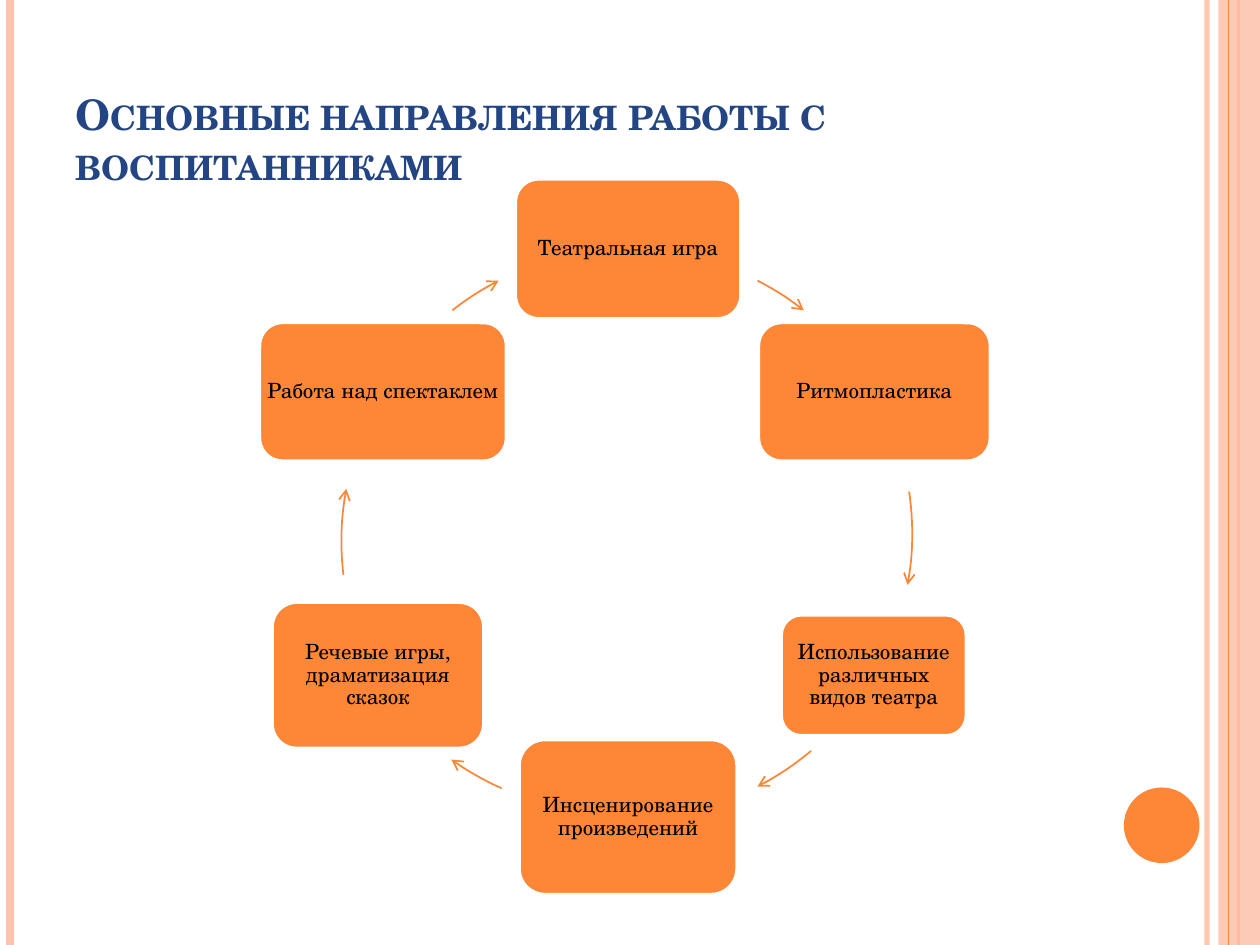
from lxml.etree import SubElement
from pptx import Presentation
from pptx.dml.color import RGBColor
from pptx.enum.shapes import MSO_CONNECTOR, MSO_SHAPE
from pptx.enum.text import MSO_ANCHOR, PP_ALIGN
from pptx.oxml.ns import qn
from pptx.util import Inches, Pt

COLORS = {"orange": "FE8637", "peach": "FEC3AE", "title": "244583",
          "text": "000000", "white": "FFFFFF"}
FONT = "TeX Gyre Schola"
DIRECTIONS = [
    ("Театральная игра", (4.09, 1.42, 1.79, 1.11)),
    ("Ритмопластика", (6.02, 2.56, 1.84, 1.1)),
    ("Использование различных видов театра", (6.2, 4.88, 1.47, 0.96)),
    ("Инсценирование произведений", (4.12, 5.87, 1.73, 1.23)),
    ("Речевые игры, драматизация сказок", (2.16, 4.78, 1.68, 1.16)),
    ("Работа над спектаклем", (2.06, 2.56, 1.96, 1.1)),
]
RING = (2.73, 1.98, 4.51, 4.51)
ARROWS = [
    (RING, 297.1, 308.2),
    (RING, 351.5, 10.4),
    (RING, 49.9, 62.9),
    ((2.64, 1.94, 4.51, 4.51), 113.9, 125.6),
    ((2.71, 2.04, 4.51, 4.51), 173.2, 190.6),
    (RING, 231.8, 242.9),
]


def rgb(name):
    """Return the named colour."""
    return RGBColor.from_string(COLORS[name])


def set_alpha(fill_parent, percent):
    """Make the solid fill inside an element partly transparent."""
    color = next(fill_parent.iter(qn("a:srgbClr")))
    SubElement(color, qn("a:alpha"), val=str(percent * 1000))


def add_figure(slide, kind, box, fill=None, line=None, width=1):
    """Add a preset shape in a box with a plain fill and line."""
    figure = slide.shapes.add_shape(kind, *map(Inches, box))
    figure.shadow.inherit = False
    if fill:
        figure.fill.solid()
        figure.fill.fore_color.rgb = rgb(fill)
    else:
        figure.fill.background()
    if line:
        figure.line.color.rgb = rgb(line)
        figure.line.width = Pt(width)
    else:
        figure.line.fill.background()
    return figure


def add_stripe(slide, x, height, color, width, alpha=100):
    """Draw a vertical stripe from the top edge."""
    stripe = slide.shapes.add_connector(
        MSO_CONNECTOR.STRAIGHT, Inches(x), 0, Inches(x), Inches(height))
    stripe.line.color.rgb = rgb(color)
    stripe.line.width = Pt(width)
    properties = stripe._element.spPr
    if alpha < 100:
        set_alpha(properties, alpha)
    SubElement(properties, qn("a:effectLst"))


def add_frame(slide, box):
    """Draw the edge stripes, the side band and the disc."""
    left, top, width, height = box
    right = left + width
    add_stripe(slide, right - 0.42, height, "peach", 3, 93)
    add_stripe(slide, left + 0.08, height, "peach", 4.5)
    add_stripe(slide, right - 0.17, height, "orange", 1.5)
    band = add_figure(slide, MSO_SHAPE.RECTANGLE,
                      (right - 0.33, top, 0.33, height), "peach")
    set_alpha(band._element.spPr, 87)
    add_stripe(slide, right - 0.25, height, "orange", 0.75)
    add_figure(slide, MSO_SHAPE.OVAL,
               (right - 1.08, top + height - 1.25, 0.6, 0.6), "orange")


def write(frame, wording, size, color):
    """Write one run into the first paragraph and return both."""
    paragraph = frame.paragraphs[0]
    run = paragraph.add_run()
    run.text = wording
    run.font.name = FONT
    run.font.size = Pt(size)
    run.font.color.rgb = rgb(color)
    return paragraph, run


def add_title(slide, box):
    """Write the heading in bold small capitals."""
    frame = slide.shapes.add_textbox(*map(Inches, box)).text_frame
    frame.word_wrap = True
    frame.vertical_anchor = MSO_ANCHOR.BOTTOM
    _, heading = write(frame, "Основные направления работы с воспитанниками",
                       24, "title")
    heading.font.bold = True
    heading.font._element.set("cap", "small")


def add_direction(slide, wording, box):
    """Draw one rounded card of the cycle."""
    card = add_figure(slide, MSO_SHAPE.ROUNDED_RECTANGLE, box,
                      "orange", "white", 2)
    frame = card.text_frame
    frame.word_wrap = True
    frame.vertical_anchor = MSO_ANCHOR.MIDDLE
    frame.margin_left = frame.margin_right = 0
    frame.margin_top = frame.margin_bottom = Inches(0.05)
    paragraph, _ = write(frame, wording, 12, "text")
    paragraph.alignment = PP_ALIGN.CENTER
    paragraph.line_spacing = 0.9


def add_arrow(slide, ring, start, end):
    """Draw a clockwise arrow along a ring between two angles."""
    arrow = add_figure(slide, MSO_SHAPE.ARC, ring, line="orange")
    for index, degrees in enumerate((start, end)):
        arrow.adjustments[index] = degrees * 0.6
    SubElement(arrow.line._get_or_add_ln(), qn("a:tailEnd"), type="arrow")


def add_cycle(slide):
    """Draw the cards, each followed by the arrow to the next one."""
    for (wording, box), arrow in zip(DIRECTIONS, ARROWS):
        add_direction(slide, wording, box)
        add_arrow(slide, *arrow)


def main():
    """Build the slide and save it."""
    deck = Presentation()
    deck.slide_width, deck.slide_height = Inches(10), Inches(7.5)
    slide = deck.slides.add_slide(deck.slide_layouts[6])
    add_frame(slide, (0, 0, 10, 7.5))
    add_title(slide, (0.5, 0.3, 8.17, 1.25))
    add_cycle(slide)
    deck.save("out.pptx")


if __name__ == "__main__":
    main()
